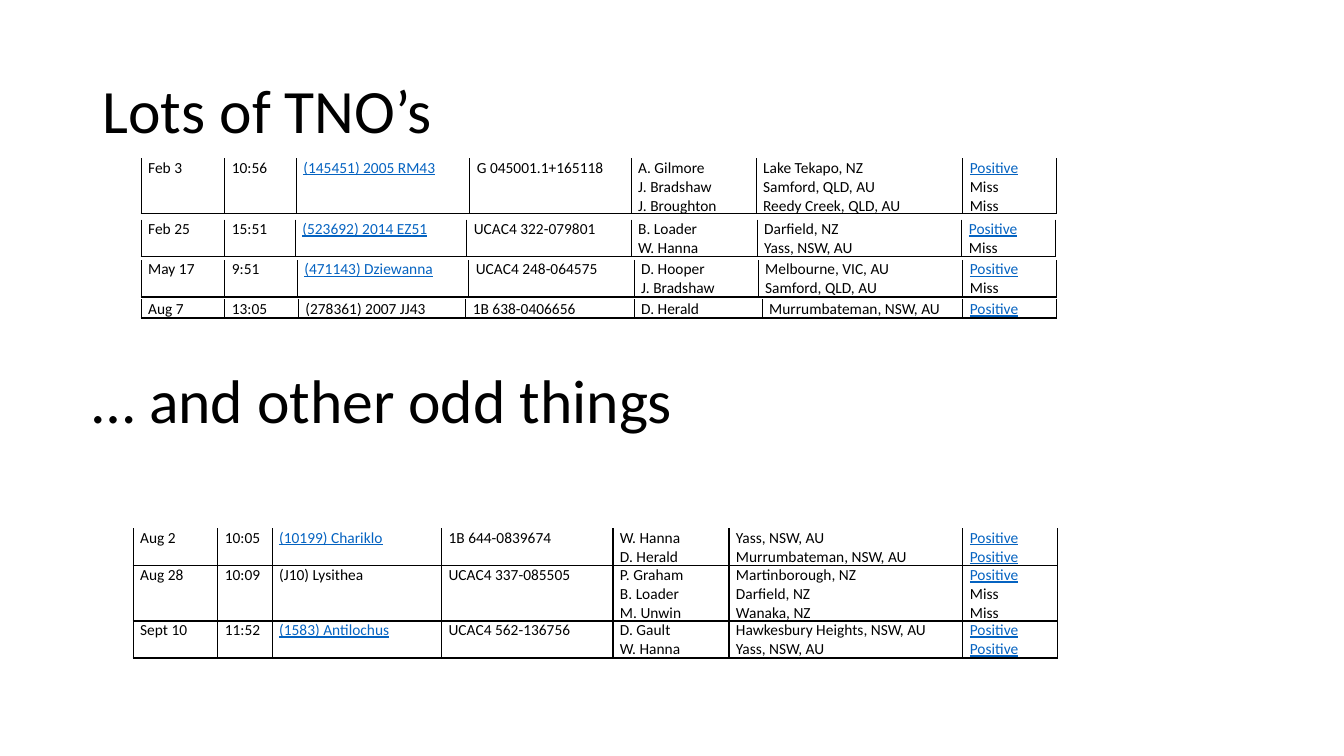
from dataclasses import dataclass

from lxml import etree
from pptx import Presentation
from pptx.dml.color import RGBColor
from pptx.enum.text import MSO_ANCHOR
from pptx.oxml.ns import qn
from pptx.util import Inches, Pt

MIDDLE = MSO_ANCHOR.MIDDLE
TOP = MSO_ANCHOR.TOP


@dataclass(frozen=True)
class Theme:
    font: str = "Calibri"
    ink: str = "000000"
    link: str = "0563C1"
    paper: str = "FFFFFF"
    heading_size: int = 44
    cell_size: int = 11
    border_width: int = 1


THEME = Theme()
LINE_HEIGHT = 0.183
CELL_INSET = 0.07
TNO_LEFT = 1.4
ODD_LEFT = 1.32
ODD_COLUMNS = [0.84, 0.54, 1.68, 1.7, 1.15, 2.32, 0.94]
LINKED = {
    "Positive",
    "(145451) 2005 RM43",
    "(523692) 2014 EZ51",
    "(471143) Dziewanna",
    "(1583) Antilochus",
    "(10199) Chariklo",
}

TNO_EVENTS = [
    (1.57, [0.83, 0.71, 1.72, 1.6, 1.24, 2.05, 0.93],
     ["Feb 3", "10:56", "(145451) 2005 RM43", "G 045001.1+165118",
      "A. Gilmore\nJ. Bradshaw\nJ. Broughton",
      "Lake Tekapo, NZ\nSamford, QLD, AU\nReedy Creek, QLD, AU",
      "Positive\nMiss\nMiss"]),
    (2.18, [0.83, 0.7, 1.7, 1.63, 1.25, 2.03, 0.93],
     ["Feb 25", "15:51", "(523692) 2014 EZ51", "UCAC4 322-079801",
      "B. Loader\nW. Hanna", "Darfield, NZ\nYass, NSW, AU",
      "Positive\nMiss"]),
    (2.58, [0.83, 0.72, 1.7, 1.64, 1.23, 2.03, 0.93],
     ["May 17", "9:51", "(471143) Dziewanna", "UCAC4 248-064575",
      "D. Hooper\nJ. Bradshaw", "Melbourne, VIC, AU\nSamford, QLD, AU",
      "Positive\nMiss"]),
    (2.97, [0.83, 0.73, 1.66, 1.67, 1.27, 1.99, 0.93],
     ["Aug 7", "13:05", "(278361) 2007 JJ43", "1B 638-0406656",
      "D. Herald", "Murrumbateman, NSW, AU", "Positive"]),
]

ODD_EVENTS = [
    (6.16,
     ["Sept 10", "11:52", "(1583) Antilochus", "UCAC4 562-136756",
      "D. Gault\nW. Hanna", "Hawkesbury Heights, NSW, AU\nYass, NSW, AU",
      "Positive\nPositive"]),
    (5.61,
     ["Aug 28", "10:09", "(J10) Lysithea", "UCAC4 337-085505",
      "P. Graham\nB. Loader\nM. Unwin",
      "Martinborough, NZ\nDarfield, NZ\nWanaka, NZ",
      "Positive\nMiss\nMiss"]),
    (5.24,
     ["Aug 2", "10:05", "(10199) Chariklo", "1B 644-0839674",
      "W. Hanna\nD. Herald", "Yass, NSW, AU\nMurrumbateman, NSW, AU",
      "Positive\nPositive"]),
]


def write_text(frame, text, *, size, spacing=1.0):
    for index, line in enumerate(text.split("\n")):
        para = frame.add_paragraph() if index else frame.paragraphs[0]
        para.line_spacing = spacing
        span = para.add_run()
        span.text = line
        linked = line in LINKED
        span.font.name = THEME.font
        span.font.size = Pt(size)
        span.font.underline = linked
        span.font.color.rgb = RGBColor.from_string(THEME.link if linked else THEME.ink)


def add_heading(page, text, left, top):
    box = page.shapes.add_textbox(Inches(left), Inches(top), Inches(11.5), Inches(1.45))
    frame = box.text_frame
    frame.word_wrap = True
    frame.vertical_anchor = MIDDLE
    write_text(frame, text, size=THEME.heading_size, spacing=0.9)


def set_borders(cell):
    properties = cell._tc.get_or_add_tcPr()
    for side in ("lnL", "lnR", "lnT", "lnB"):
        line = etree.SubElement(properties, qn(f"a:{side}"), w=str(Pt(THEME.border_width)))
        if side == "lnT":
            etree.SubElement(line, qn("a:noFill"))
        else:
            fill = etree.SubElement(line, qn("a:solidFill"))
            etree.SubElement(fill, qn("a:srgbClr"), val=THEME.ink)


def fill_cell(cell, text):
    cell.margin_left = cell.margin_right = Inches(CELL_INSET)
    cell.margin_top = cell.margin_bottom = 0
    cell.vertical_anchor = TOP
    set_borders(cell)
    cell.fill.solid()
    cell.fill.fore_color.rgb = RGBColor.from_string(THEME.paper)
    write_text(cell.text_frame, text, size=THEME.cell_size)


def add_event(page, left, top, columns, values):
    line_count = max(value.count("\n") + 1 for value in values)
    frame = page.shapes.add_table(
        1, len(columns), Inches(left), Inches(top),
        Inches(sum(columns)), Inches(LINE_HEIGHT * line_count))
    table = frame.table
    table.first_row = False
    table.horz_banding = False
    for column, width, cell, value in zip(table.columns, columns, table.rows[0].cells, values):
        column.width = Inches(width)
        fill_cell(cell, value)


def main():
    deck = Presentation()
    deck.slide_width = Inches(13.33)
    deck.slide_height = Inches(7.5)
    page = deck.slides.add_slide(deck.slide_layouts[6])
    add_heading(page, "Lots of TNO’s", 0.92, 0.4)
    for top, columns, values in TNO_EVENTS:
        add_event(page, TNO_LEFT, top, columns, values)
    add_heading(page, "… and other odd things", 0.82, 3.28)
    for top, values in ODD_EVENTS:
        add_event(page, ODD_LEFT, top, ODD_COLUMNS, values)
    deck.save("out.pptx")


if __name__ == "__main__":
    main()
